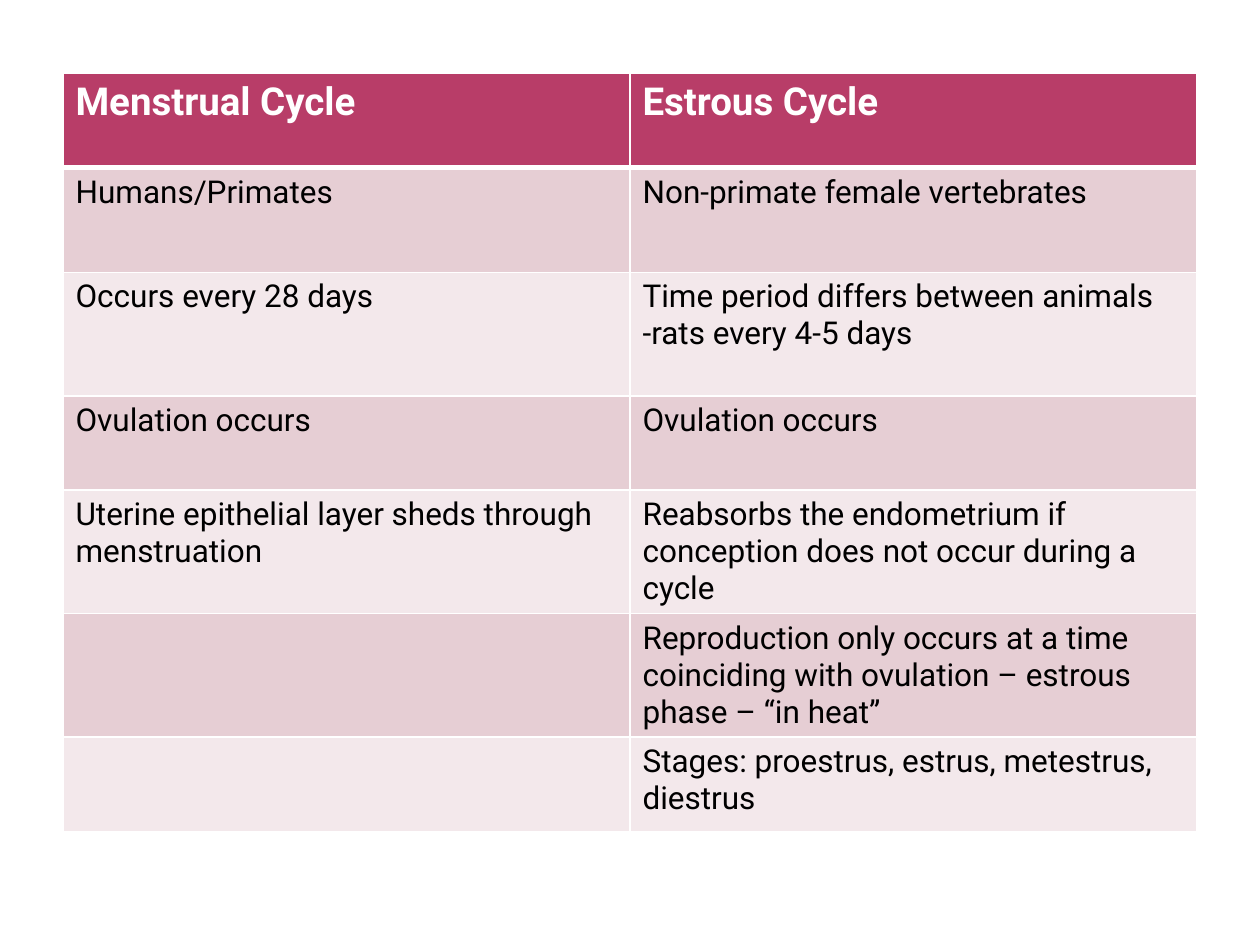
from dataclasses import dataclass

from lxml.etree import SubElement
from pptx import Presentation
from pptx.dml.color import RGBColor
from pptx.oxml.ns import qn
from pptx.util import Cm, Pt


@dataclass(frozen=True)
class Theme:
    font: str = "Roboto"
    header_size: int = 22
    body_size: int = 18
    header_fill: str = "B83D68"
    bands: tuple = ("E6CED4", "F3E8EB")
    header_text: str = "FFFFFF"
    body_text: str = "000000"
    rule: str = "FFFFFF"
    rule_width: int = 1
    header_rule_width: int = 3


THEME = Theme()

COMPARISON = [
    (1.9, "Menstrual Cycle", "Estrous Cycle"),
    (2.11, "Humans/Primates", "Non-primate female vertebrates"),
    (2.49, "Occurs every 28 days",
     "Time period differs between animals\n-rats every 4-5 days"),
    (1.9, "Ovulation occurs", "Ovulation occurs"),
    (2.49, "Uterine epithelial layer sheds through menstruation",
     "Reabsorbs the endometrium if conception does not occur during a cycle"),
    (2.49, "",
     "Reproduction only occurs at a time coinciding with ovulation "
     "– estrous phase – “in heat”"),
    (1.9, "", "Stages: proestrus, estrus, metestrus, diestrus"),
]


def write_text(frame, text, *, size, color, bold=False):
    frame.text = text
    for paragraph in frame.paragraphs:
        font = paragraph.font
        font.name, font.size, font.bold = THEME.font, Pt(size), bold
        font.color.rgb = RGBColor.from_string(color)
        for run in paragraph.runs:
            run.font.name, run.font.size, run.font.bold = THEME.font, Pt(size), bold
            run.font.color.rgb = RGBColor.from_string(color)


def draw_borders(cell, *, top, bottom):
    properties = cell._tc.get_or_add_tcPr()
    widths = {"a:lnL": THEME.rule_width, "a:lnR": THEME.rule_width,
              "a:lnT": top, "a:lnB": bottom}
    for index, (side, width) in enumerate(widths.items()):
        line = SubElement(properties, qn(side), w=str(Pt(width)))
        properties.insert(index, line)
        fill = SubElement(line, qn("a:solidFill"))
        SubElement(fill, qn("a:srgbClr"), val=THEME.rule)


def add_comparison(slide, left, top, width, rows):
    height = sum(row_height for row_height, *_ in rows)
    comparison = slide.shapes.add_table(
        len(rows), 2, Cm(left), Cm(top), Cm(width), Cm(height)).table
    for column in comparison.columns:
        column.width = Cm(width / 2)
    for index, (row_height, *texts) in enumerate(rows):
        comparison.rows[index].height = Cm(row_height)
        is_header = index == 0
        fill = THEME.header_fill if is_header else THEME.bands[(index - 1) % 2]
        size = THEME.header_size if is_header else THEME.body_size
        color = THEME.header_text if is_header else THEME.body_text
        for cell, text in zip(comparison.rows[index].cells, texts):
            cell.fill.solid()
            cell.fill.fore_color.rgb = RGBColor.from_string(fill)
            write_text(cell.text_frame, text, size=size, color=color, bold=is_header)
            draw_borders(
                cell,
                top=THEME.header_rule_width if index == 1 else THEME.rule_width,
                bottom=THEME.header_rule_width if is_header else THEME.rule_width)


def main():
    presentation = Presentation()
    presentation.slide_width, presentation.slide_height = Cm(25.4), Cm(19.05)
    slide = presentation.slides.add_slide(presentation.slide_layouts[6])
    add_comparison(slide, 1.27, 1.48, 22.86, COMPARISON)
    presentation.save("out.pptx")


if __name__ == "__main__":
    main()
